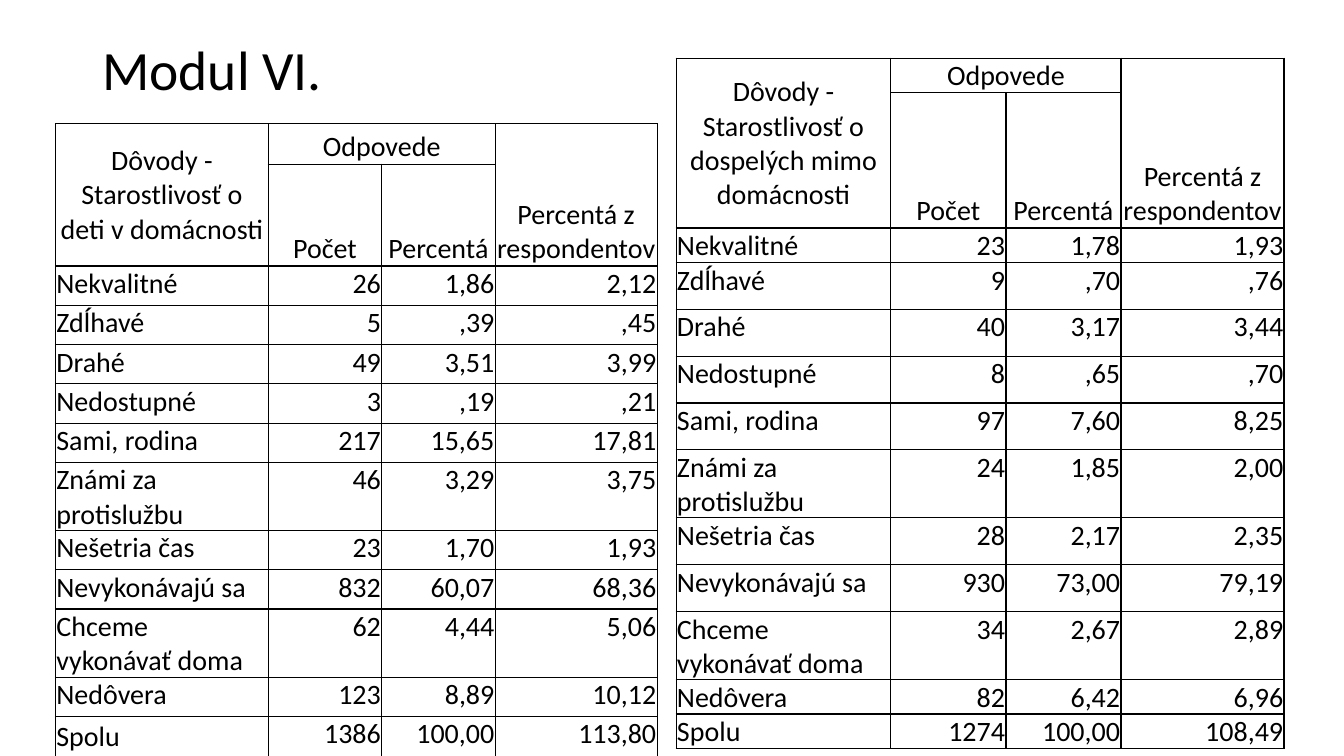
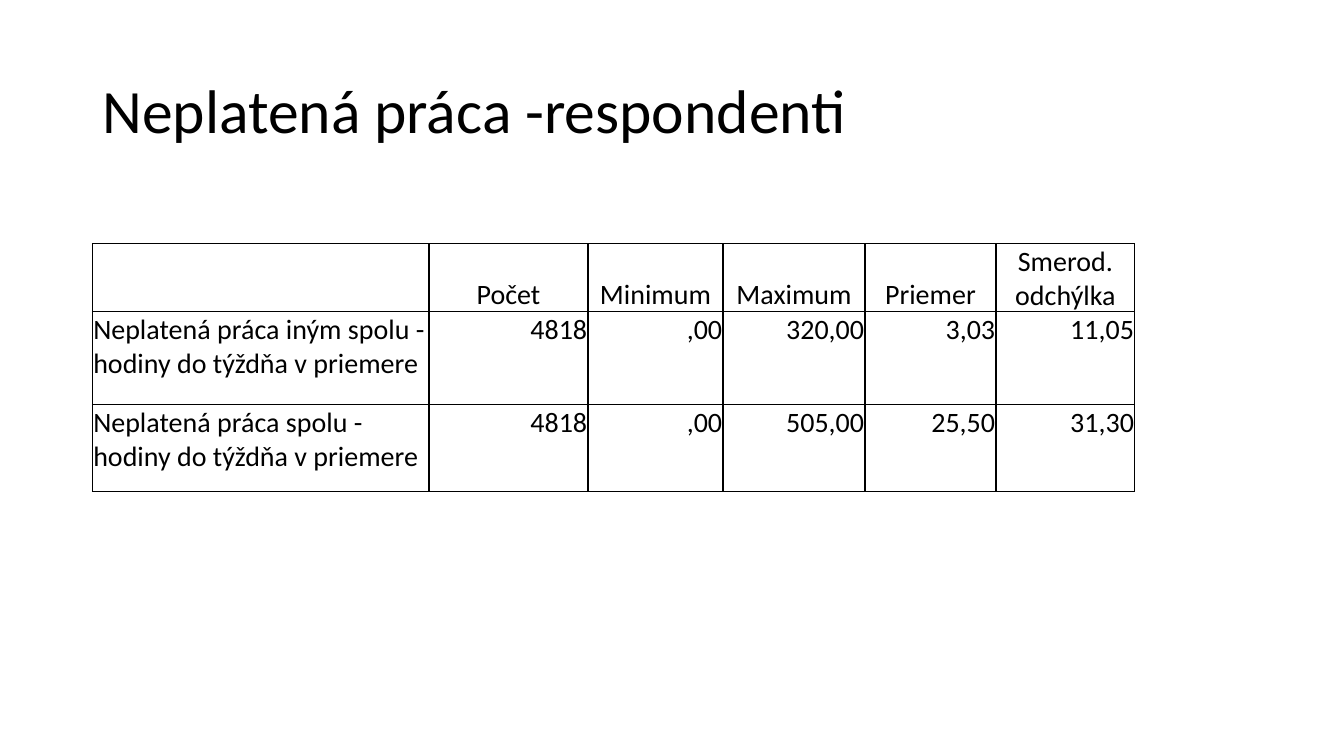
from dataclasses import dataclass
from itertools import product

from lxml.etree import SubElement as Sub
from pptx import Presentation
from pptx.dml.color import RGBColor as Rgb
from pptx.enum.text import MSO_ANCHOR as Anchor, PP_ALIGN as Align
from pptx.oxml.ns import qn
from pptx.slide import Slide
from pptx.table import _Cell as Cell
from pptx.text.text import TextFrame as Frame
from pptx.util import Cm, Pt


# Theme
@dataclass(frozen=True)
class Theme:
    font: str = "Calibri"
    ink: str = "000000"
    paper: str = "FFFFFF"
    title: float = 44
    small: float = 39.6
    body: float = 20
    rule: float = 1
    inset: float = 0.02


THEME = Theme()


# Parts: all lengths in centimetres
@dataclass(frozen=True)
class Title:
    text: str
    width: float
    height: float
    size: float
    left: float = 2.33
    top: float = 1.02


@dataclass(frozen=True)
class Grid:
    left: float
    top: float
    cols: list[float]
    rows: list[float]
    cells: list[tuple[str, ...]]
    heads: int = 1
    spans: tuple[tuple[int, int, int, int], ...] = ()
    total: bool = False


# Text
def write(frame: Frame, text: str, *, size: float = THEME.body,
          align: Align = Align.LEFT, space: float | None = None) -> None:
    para = frame.paragraphs[0]
    para.alignment = align
    para.line_spacing = space
    run = para.add_run()
    run.text = text
    run.font.name = THEME.font
    run.font.size = Pt(size)
    run.font.color.rgb = Rgb.from_string(THEME.ink)


def add_title(slide: Slide, title: Title) -> None:
    box = slide.shapes.add_textbox(Cm(title.left), Cm(title.top),
                                   Cm(title.width), Cm(title.height))
    frame = box.text_frame
    frame.word_wrap = True
    frame.vertical_anchor = Anchor.MIDDLE
    write(frame, title.text, size=title.size, space=0.9)


# Tables
def outline(cell: Cell) -> None:
    props = cell._tc.get_or_add_tcPr()
    for side in ("lnL", "lnR", "lnT", "lnB"):
        line = Sub(props, qn(f"a:{side}"), w=str(Pt(THEME.rule)))
        fill = Sub(line, qn("a:solidFill"))
        Sub(fill, qn("a:srgbClr"), val=THEME.ink)
    cell.fill.background()


def add_grid(slide: Slide, grid: Grid) -> None:
    shape = slide.shapes.add_table(
        len(grid.rows), len(grid.cols), Cm(grid.left), Cm(grid.top),
        Cm(sum(grid.cols)), Cm(sum(grid.rows)))
    table = shape.table
    table.first_row = table.horz_banding = False
    for col, width in zip(table.columns, grid.cols):
        col.width = Cm(width)
    for row, height in zip(table.rows, grid.rows):
        row.height = Cm(height)
    for top, left, low, right in grid.spans:
        table.cell(top, left).merge(table.cell(low, right))

    last = len(grid.rows) - 1
    for row, col in product(range(last + 1), range(len(grid.cols))):
        cell, text = table.cell(row, col), grid.cells[row][col]
        outline(cell)
        if not text:
            continue
        cell.margin_left = cell.margin_right = cell.margin_top = Cm(THEME.inset)
        cell.margin_bottom = 0
        head = row < grid.heads
        if col == 0 and (head or grid.total and row == last):
            cell.vertical_anchor = Anchor.MIDDLE
        else:
            cell.vertical_anchor = Anchor.BOTTOM if head else Anchor.TOP
        align = Align.CENTER if head else Align.RIGHT if col else Align.LEFT
        write(cell.text_frame, text, align=align)


# Reasons tables
REASONS = ["Nekvalitné", "Zdĺhavé", "Drahé", "Nedostupné", "Sami, rodina",
           "Známi za protislužbu", "Nešetria čas", "Nevykonávajú sa",
           "Chceme vykonávať doma", "Nedôvera", "Spolu"]


def reasons(topic: str, left: float, top: float, cols: list[float],
            rows: list[float], data: list[tuple[str, str, str]]) -> Grid:
    heads = [(f"Dôvody - Starostlivosť o {topic}", "Odpovede", "",
              "Percentá z respondentov"),
             ("", "Počet", "Percentá", "")]
    body = [(name, *nums) for name, nums in zip(REASONS, data)]
    return Grid(left, top, cols, rows, heads + body, heads=2, total=True,
                spans=((0, 0, 1, 0), (0, 1, 0, 2), (0, 3, 1, 3)))


KIDS = reasons(
    "deti v domácnosti", 1.4, 3.12, [5.36, 2.86, 2.86, 4.08],
    [1.02, 1.47] + [0.99] * 8 + [1.65, 0.99, 1.02],
    [("26", "1,86", "2,12"), ("5", ",39", ",45"), ("49", "3,51", "3,99"),
     ("3", ",19", ",21"), ("217", "15,65", "17,81"), ("46", "3,29", "3,75"),
     ("23", "1,70", "1,93"), ("832", "60,07", "68,36"),
     ("62", "4,44", "5,06"), ("123", "8,89", "10,12"),
     ("1386", "100,00", "113,80")])

ADULTS = reasons(
    "dospelých mimo domácnosti", 17.04, 1.47, [5.41, 2.9, 2.9, 4.11],
    [0.76, 1.6, 0.74] + [1.18] * 8 + [0.74, 0.76],
    [("23", "1,78", "1,93"), ("9", ",70", ",76"), ("40", "3,17", "3,44"),
     ("8", ",65", ",70"), ("97", "7,60", "8,25"), ("24", "1,85", "2,00"),
     ("28", "2,17", "2,35"), ("930", "73,00", "79,19"),
     ("34", "2,67", "2,89"), ("82", "6,42", "6,96"),
     ("1274", "100,00", "108,49")])

# Unpaid work table
HOURS = Grid(
    2.33, 6.14, [8.48, 4.01, 3.4, 3.58, 3.3, 3.5], [1.4, 2.34, 2.18],
    [("", "Počet", "Minimum", "Maximum", "Priemer", "Smerod. odchýlka"),
     ("Neplatená práca iným spolu - hodiny do týždňa v priemere",
      "4818", ",00", "320,00", "3,03", "11,05"),
     ("Neplatená práca spolu - hodiny do týždňa v priemere",
      "4818", ",00", "505,00", "25,50", "31,30")])

PAGES = [
    (Title("Modul VI.", 14.22, 1.6, THEME.small), [KIDS, ADULTS]),
    (Title("Neplatená práca -respondenti", 29.21, 3.68, THEME.title), [HOURS]),
]


# Deck
def main() -> None:
    deck = Presentation()
    deck.slide_width, deck.slide_height = Cm(33.87), Cm(19.05)
    for title, grids in PAGES:
        slide = deck.slides.add_slide(deck.slide_layouts[6])
        back = slide.background.fill
        back.solid()
        back.fore_color.rgb = Rgb.from_string(THEME.paper)
        add_title(slide, title)
        for grid in grids:
            add_grid(slide, grid)
    deck.save("out.pptx")


if __name__ == "__main__":
    main()
